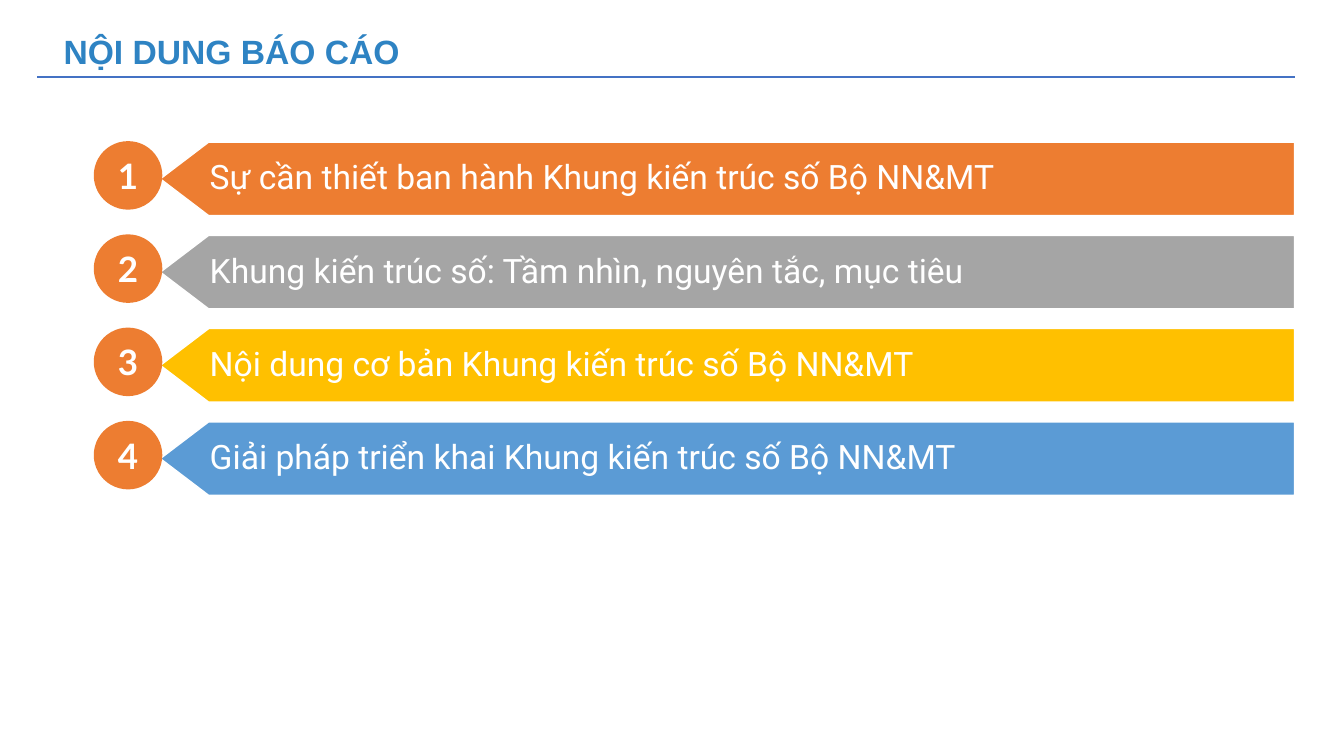
from lxml import etree
from pptx import Presentation
from pptx.dml.color import RGBColor
from pptx.enum.shapes import MSO_CONNECTOR, MSO_SHAPE
from pptx.enum.text import MSO_ANCHOR, MSO_AUTO_SIZE, PP_ALIGN
from pptx.oxml.ns import qn
from pptx.util import Inches, Pt

LEFT, CENTER = PP_ALIGN.LEFT, PP_ALIGN.CENTER
MIDDLE = MSO_ANCHOR.MIDDLE
NO_AUTOFIT = MSO_AUTO_SIZE.NONE
OVAL = MSO_SHAPE.OVAL
STRAIGHT = MSO_CONNECTOR.STRAIGHT

WHITE, ORANGE = "FFFFFF", "ED7D31"
TITLE_BLUE, RULE_BLUE = "2E83C3", "4472C4"
TOPICS = [
    ("Sự cần thiết ban hành Khung kiến trúc số Bộ NN&MT", ORANGE),
    ("Khung kiến trúc số: Tầm nhìn, nguyên tắc, mục tiêu", "A5A5A5"),
    ("Nội dung cơ bản Khung kiến trúc số Bộ NN&MT", "FFC000"),
    ("Giải pháp triển khai Khung kiến trúc số Bộ NN&MT", "5B9BD5"),
]
ROW_PITCH = 0.925
BADGE_SIZE = 0.68
BAR_OFFSET, BAR_HEIGHT, BAR_TIP = 0.66, 0.73, 0.48


def color(hex_value):
    return RGBColor.from_string(hex_value)


def write(shape, text, *, font, size, fill=WHITE, bold=False, align=LEFT,
          margins=(0.1, 0.05, 0.1, 0.05), spacing=1.0):
    frame = shape.text_frame
    frame.auto_size = NO_AUTOFIT
    frame.word_wrap = True
    frame.vertical_anchor = MIDDLE
    (frame.margin_left, frame.margin_top,
     frame.margin_right, frame.margin_bottom) = map(Inches, margins)
    para = frame.paragraphs[0]
    para.alignment = align
    para.line_spacing = spacing
    span = para.add_run()
    span.text = text
    span.font.name = font
    span.font.size = Pt(size)
    span.font.bold = bold
    span.font.color.rgb = color(fill)


def add_heading(page, text, left, top, width, height):
    # Title
    title = page.shapes.title
    title.left, title.top = Inches(left + 0.16), Inches(top)
    title.width, title.height = Inches(7.59), Inches(height)
    write(title, text, font="Arial", size=24, fill=TITLE_BLUE, bold=True,
          spacing=0.9)

    # Rule under the title
    bottom = Inches(top + height)
    rule = page.shapes.add_connector(STRAIGHT, Inches(left), bottom,
                                     Inches(left + width), bottom)
    rule.line.color.rgb = color(RULE_BLUE)
    rule.line.width = Pt(1.5)
    etree.SubElement(rule._element.spPr, qn("a:effectLst"))


def add_topic(page, number, text, fill, left, top, width):
    # Bar with a point on its left side
    tip, right = left + BAR_OFFSET, left + width
    shoulder, bottom = tip + BAR_TIP, top + BAR_HEIGHT
    outline = [(shoulder, bottom), (tip, top + BAR_HEIGHT / 2),
               (shoulder, top), (right, top)]
    builder = page.shapes.build_freeform(Inches(right), Inches(bottom))
    builder.add_line_segments([(Inches(x), Inches(y)) for x, y in outline])
    bar = builder.convert_to_shape()
    bar.shadow.inherit = False
    bar.fill.solid()
    bar.fill.fore_color.rgb = color(fill)
    bar.line.color.rgb = color(WHITE)
    bar.line.width = Pt(1)
    write(bar, text, font="Roboto", size=24, spacing=0.9,
          margins=(0.49, 0.12, 0.23, 0.12))

    # Numbered badge
    badge = page.shapes.add_shape(OVAL, Inches(left), Inches(top - 0.01),
                                  Inches(BADGE_SIZE), Inches(BADGE_SIZE))
    badge.shadow.inherit = False
    badge.fill.solid()
    badge.fill.fore_color.rgb = color(ORANGE)
    badge.line.fill.background()
    write(badge, str(number), font="Lato", size=25, bold=True, align=CENTER,
          margins=(0, 0, 0, 0))


def add_agenda(page, topics, left, top, width):
    for index, (text, fill) in enumerate(topics):
        add_topic(page, index + 1, text, fill,
                  left, top + index * ROW_PITCH, width)


def main():
    deck = Presentation()
    deck.slide_width, deck.slide_height = Inches(13.33), Inches(7.5)
    page = deck.slides.add_slide(deck.slide_layouts.get_by_name("Title Only"))
    add_heading(page, "NỘI DUNG BÁO CÁO", 0.37, 0.3, 12.47, 0.46)
    add_agenda(page, TOPICS, 0.93, 1.41, 11.91)
    deck.save("out.pptx")


if __name__ == "__main__":
    main()
